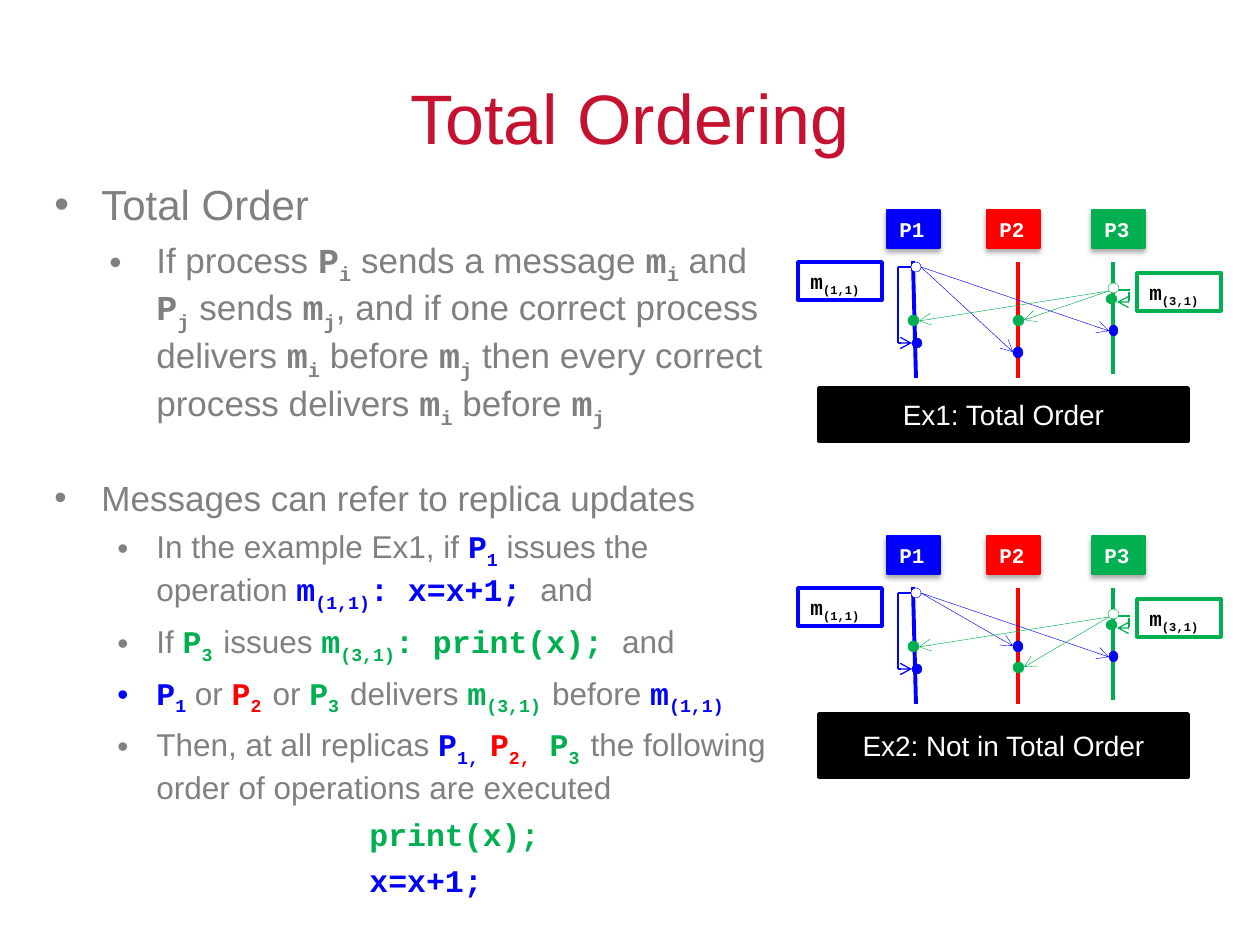
from lxml.etree import SubElement
from pptx import Presentation
from pptx.dml.color import RGBColor
from pptx.enum.shapes import MSO_CONNECTOR as Connector, MSO_SHAPE as Shape
from pptx.enum.text import MSO_ANCHOR as Anchor, PP_ALIGN as Align
from pptx.oxml.ns import qn
from pptx.util import Emu, Pt

PX_PER_INCH = 126
BLUE, RED, GREEN = "0000FF", "FF0000", "00B050"
GREY, BLACK, WHITE, CRIMSON = "808080", "000000", "FFFFFF", "C41230"
SANS, MONO = "Arial", "Courier New"


def px(length):
    return Emu(round(length * 914400 / PX_PER_INCH))


def rgb(value):
    return RGBColor.from_string(value)


def plain(text):
    return [(text, SANS, GREY, False)]


def code(text, color=GREY):
    return [(text, MONO, color, False)]


def term(letter, index, color=GREY):
    return code(letter, color) + [(index, MONO, color, True)]


class Slide:
    def __init__(self, deck):
        self.page = deck.slides.add_slide(deck.slide_layouts[5])

    def span(self, para, text, font, size, color, sub=False):
        run = para.add_run()
        run.text = text
        run.font.name = font
        run.font.size = Pt(size)
        run.font.bold = font == MONO
        run.font.color.rgb = rgb(color)
        if sub:
            run.font._element.set("baseline", "-25000")

    def title(self, text, left, top, width, height):
        box = self.page.shapes.title
        box.left, box.top, box.width, box.height = map(px, (left, top, width, height))
        frame = box.text_frame
        frame.vertical_anchor = Anchor.MIDDLE
        frame.paragraphs[0].alignment = Align.CENTER
        self.span(frame.paragraphs[0], text, SANS, 40, CRIMSON)

    def body(self, items, left, top, width, height):
        box = self.page.shapes.add_textbox(*map(px, (left, top, width, height)))
        frame = box.text_frame
        frame.word_wrap = True
        frame.margin_top = px(11)
        for number, (level, size, margin, hang, before, spans) in enumerate(items):
            para = frame.add_paragraph() if number else frame.paragraphs[0]
            para.level = level
            para.space_before = Pt(before)
            props = para._p.get_or_add_pPr()
            props.set("marL", str(px(margin)))
            props.set("indent", str(px(-hang)))
            if hang:
                SubElement(props, qn("a:buFont")).set("typeface", SANS)
                SubElement(props, qn("a:buChar")).set("char", "•")
            for text, font, color, sub in spans:
                self.span(para, text, font, size, color, sub)

    def shape(self, kind, left, top, width, height, fill, line, weight):
        shape = self.page.shapes.add_shape(kind, *map(px, (left, top, width, height)))
        shape.shadow.inherit = False
        shape.fill.solid()
        shape.fill.fore_color.rgb = rgb(fill)
        shape.line.color.rgb = rgb(line)
        shape.line.width = Pt(weight)
        return shape

    def dot(self, left, top, width, height, line, fill=None):
        self.shape(Shape.OVAL, left, top, width, height, fill or line, line, 0.25)

    def label(self, left, top, width, height, fill, line, weight, spans, size=12,
              centred=False):
        box = self.shape(Shape.RECTANGLE, left, top, width, height, fill, line, weight)
        frame = box.text_frame
        frame.vertical_anchor = Anchor.MIDDLE if centred else Anchor.TOP
        para = frame.paragraphs[0]
        para.alignment = Align.CENTER if centred else Align.LEFT
        for text, font, color, sub in spans:
            self.span(para, text, font, size, color, sub)
        return box

    def process(self, name, left, top, color):
        box = self.label(left, top, 53, 38, color, color, 0.75, code(name, WHITE))
        effects = box._element.spPr.find(qn("a:effectLst"))
        shadow = SubElement(effects, qn("a:outerShdw"), blurRad=str(Pt(3.1)),
                            dist=str(Pt(1.8)), dir="5400000", rotWithShape="0")
        tint = SubElement(shadow, qn("a:srgbClr"), val=BLACK)
        SubElement(tint, qn("a:alpha"), val="35000")

    def line(self, x1, y1, x2, y2, color, weight, arrow=False):
        line = self.page.shapes.add_connector(
            Connector.STRAIGHT, *map(px, (x1, y1, x2, y2)))
        line.line.color.rgb = rgb(color)
        line.line.width = Pt(weight)
        if arrow:
            SubElement(line.line._get_or_add_ln(), qn("a:tailEnd")).set("type", "arrow")
        SubElement(line._element.spPr, qn("a:effectLst"))

    def example(self, top, caption, caption_height, blue_at_p2, green_at_p2):
        for x1, y1, x2, y2, color in ((1113, 52, 1113, 164, GREEN),
                                      (1018, 52, 1018, 168, RED),
                                      (913, 51, 916, 168, BLUE)):
            self.line(x1, top + y1, x2, top + y2, color, 2.25)
        for name, left, color in (("P1", 887, BLUE), ("P2", 987, RED), ("P3", 1092, GREEN)):
            self.process(name, left, top, color)
        for left, y, index, color in ((798, 52, "(1,1)", BLUE), (1137, 63, "(3,1)", GREEN)):
            self.label(left, top + y, 84, 38, WHITE, color, 2, term("m", index, BLACK))
        self.label(819, top + 178, 369, caption_height, BLACK, BLACK, 2,
                   [(caption, SANS, WHITE, False)], 16, True)
        for x1, y1, x2, y2, color in ((921, 57, 1013, blue_at_p2, BLUE),
                                      (921, 57, 1109, 121, BLUE),
                                      (1109, 81, 1024, green_at_p2, GREEN),
                                      (1109, 81, 919, 111, GREEN)):
            self.line(x1, top + y1, x2, top + y2, color, 0.25, True)
        for x1, y1, x2, y2, color, arrow in ((898, 57, 911, 57, BLUE, False),
                                             (898, 57, 898, 133, BLUE, False),
                                             (898, 133, 912, 133, BLUE, True),
                                             (1118, 80, 1130, 80, GREEN, False),
                                             (1129, 82, 1129, 91, GREEN, False),
                                             (1129, 92, 1117, 92, GREEN, True)):
            self.line(x1, top + y1, x2, top + y2, color, 0.75, arrow)
        self.dot(911, top + 52, 10, 10, BLUE, WHITE)
        self.dot(1108, top + 73, 11, 10, GREEN, WHITE)
        for left, y, width, height, color in ((1013, blue_at_p2 - 5, 10, 11, BLUE),
                                              (1013, green_at_p2 - 5, 11, 11, GREEN),
                                              (908, 105, 11, 11, GREEN),
                                              (1109, 115, 9, 11, BLUE),
                                              (912, 128, 10, 10, BLUE),
                                              (1106, 84, 11, 10, GREEN)):
            self.dot(left, top + y, width, height, color)


def body_items():
    p_i, m_i, p_j, m_j = (term(*pair) for pair in ("Pi", "mi", "Pj", "mj"))
    rule = (plain("If process ") + p_i + plain(" sends a message ") + m_i + plain(" and ")
            + p_j + plain(" sends ") + m_j
            + plain(", and if one correct process delivers ") + m_i + plain(" before ")
            + m_j + plain(" then every correct process delivers ") + m_i
            + plain(" before ") + m_j)
    details = (
        plain("In the example Ex1, if ") + term("P", "1", BLUE)
        + plain(" issues the operation ") + term("m", "(1,1)", BLUE)
        + code(": x=x+1; ", BLUE) + plain("and"),
        plain("If ") + term("P", "3 ", GREEN) + plain("issues ")
        + term("m", "(3,1)", GREEN) + code(": print(x); ", GREEN) + plain("and"),
        term("P", "1", BLUE) + plain(" or ") + term("P", "2 ", RED) + plain("or ")
        + term("P", "3 ", GREEN) + plain("delivers ") + term("m", "(3,1) ", GREEN)
        + plain("before ") + term("m", "(1,1)", BLUE),
        plain("Then, at all replicas ") + term("P", "1, ", BLUE) + term("P", "2,", RED)
        + term(" P", "3 ", GREEN)
        + plain("the following order of operations are executed"),
    )
    return [
        (0, 24, 47, 47, 0, plain("Total Order")),
        (1, 20, 102, 47, 5, rule),
        (0, 20, 47, 47, 27, plain("Messages can refer to replica updates")),
        *((1, 18, 102, 39, 5, spans) for spans in details),
        (1, 18, 315, 0, 5, code("print(x);", GREEN)),
        (1, 18, 315, 0, 5, code("x=x+1;", BLUE)),
    ]


def main():
    deck = Presentation()
    deck.slide_width, deck.slide_height = px(1260), px(945)
    slide = Slide(deck)
    slide.title("Total Ordering", 63, 38, 1134, 158)
    slide.body(body_items(), 42, 168, 756, 746)
    slide.example(210, "Ex1: Total Order", 53, 142, 110)
    slide.example(536, "Ex2: Not in Total Order", 63, 110, 131)
    deck.save("out.pptx")


if __name__ == "__main__":
    main()
